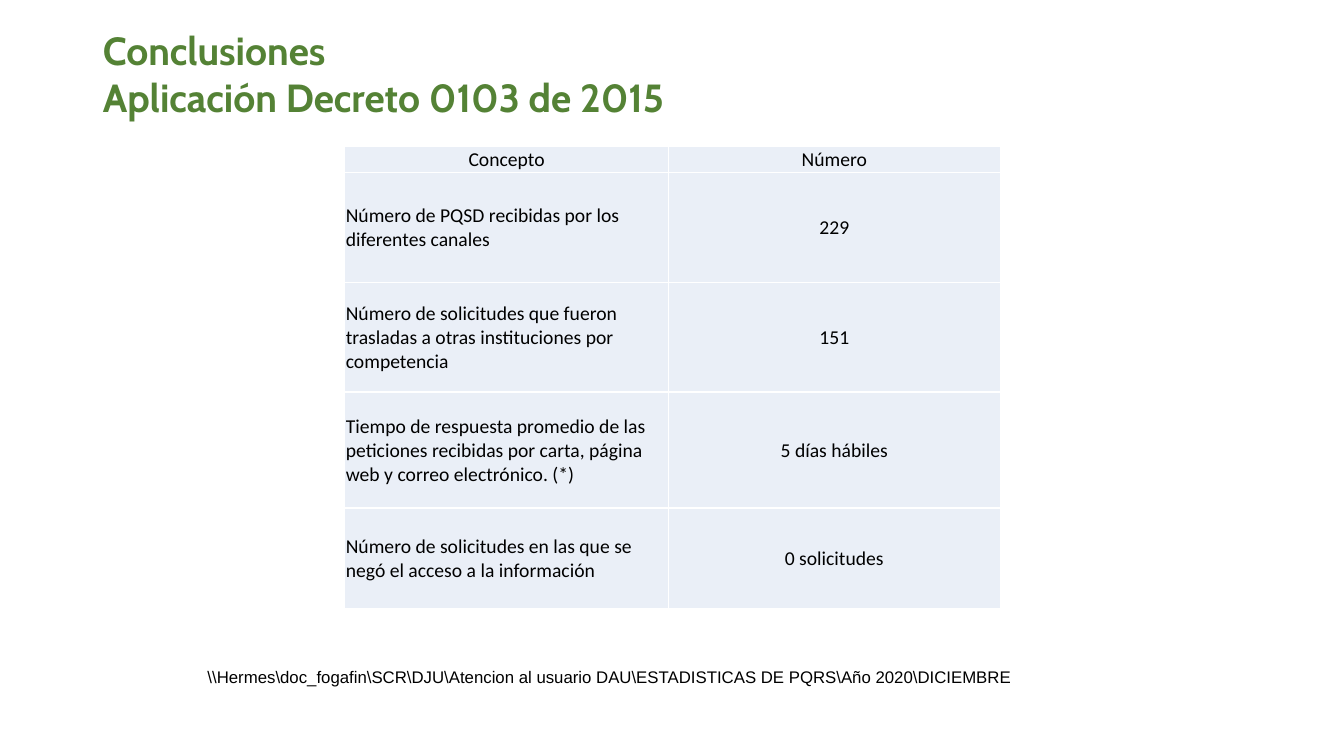
from lxml import etree
from pptx import Presentation
from pptx import util as u
from pptx.dml.color import RGBColor
from pptx.enum import text
from pptx.oxml.ns import qn

COLORS = {"title": "548235", "body": "000000", "cell": "EAEFF7", "border": "FFFFFF"}
SLIDE_W, SLIDE_H = u.Inches(13.33), u.Inches(7.5)
COLUMN_WIDTHS = [3.21, 3.29]
ROW_HEIGHTS = [0.26, 1.09, 1.09, 1.15, 1]
RESULTS = [
    ("Concepto", "Número"),
    ("Número de PQSD recibidas por los diferentes canales", "229"),
    ("Número de solicitudes que fueron trasladas a otras instituciones por competencia", "151"),
    ("Tiempo de respuesta promedio de las peticiones recibidas por carta, página web "
     "y correo electrónico. (*)", "5 días hábiles"),
    ("Número de solicitudes en las que se negó el acceso a la información", "0 solicitudes"),
]
SOURCE_PATH = (r"\\Hermes\doc_fogafin\SCR\DJU\Atencion al usuario DAU"
               r"\ESTADISTICAS DE PQRS\Año 2020\DICIEMBRE")


def style_runs(paragraph, font_name, size, color, bold=False):
    for run in paragraph.runs:
        run.font.name = font_name
        run.font.size = u.Pt(size)
        run.font.bold = bold
        run.font.color.rgb = RGBColor.from_string(COLORS[color])


def add_title(slide, wording):
    title = slide.shapes.title
    title.left, title.top = u.Inches(0.92), 0
    title.width, title.height = u.Inches(11.5), u.Inches(1.45)
    frame = title.text_frame
    frame.text = wording
    frame.vertical_anchor = text.MSO_ANCHOR.MIDDLE
    frame.auto_size = text.MSO_AUTO_SIZE.NONE
    heading = frame.paragraphs[0]
    heading.alignment = text.PP_ALIGN.LEFT
    style_runs(heading, "Cabin", 28, "title", bold=True)


def add_borders(cell):
    properties = cell._tc.get_or_add_tcPr()
    for position, side in enumerate(("lnL", "lnR", "lnT", "lnB")):
        line = etree.Element(qn(f"a:{side}"), w=str(u.Pt(1)))
        fill = etree.SubElement(line, qn("a:solidFill"))
        etree.SubElement(fill, qn("a:srgbClr"), val=COLORS["border"])
        properties.insert(position, line)


def fill_cell(cell, wording, alignment):
    cell.text_frame.text = wording
    cell.vertical_anchor = text.MSO_ANCHOR.MIDDLE
    cell.margin_left = cell.margin_right = cell.margin_top = u.Inches(0.01)
    cell.margin_bottom = 0
    cell.fill.solid()
    cell.fill.fore_color.rgb = RGBColor.from_string(COLORS["cell"])
    add_borders(cell)
    paragraph = cell.text_frame.paragraphs[0]
    paragraph.alignment = alignment
    style_runs(paragraph, "Calibri", 14, "body")


def add_results_table(slide):
    table = slide.shapes.add_table(
        len(RESULTS), len(COLUMN_WIDTHS), u.Inches(3.42), u.Inches(1.45),
        u.Inches(sum(COLUMN_WIDTHS)), u.Inches(sum(ROW_HEIGHTS))).table
    table.first_row = table.horz_banding = False
    for column, width in zip(table.columns, COLUMN_WIDTHS):
        column.width = u.Inches(width)
    for row, height in zip(table.rows, ROW_HEIGHTS):
        row.height = u.Inches(height)
    for r, result in enumerate(RESULTS):
        for c, wording in enumerate(result):
            is_concept = r > 0 and c == 0
            alignment = text.PP_ALIGN.LEFT if is_concept else text.PP_ALIGN.CENTER
            fill_cell(table.cell(r, c), wording, alignment)


def add_source_path(slide):
    frame = slide.shapes.add_textbox(
        u.Inches(1.96), u.Inches(6.57), u.Inches(9.54), u.Inches(0.3)).text_frame
    frame.word_wrap = True
    frame.auto_size = text.MSO_AUTO_SIZE.SHAPE_TO_FIT_TEXT
    frame.text = SOURCE_PATH
    paragraph = frame.paragraphs[0]
    paragraph.alignment = text.PP_ALIGN.JUSTIFY
    style_runs(paragraph, "Arial", 12, "body")


def main():
    deck = Presentation()
    deck.slide_width, deck.slide_height = SLIDE_W, SLIDE_H
    slide = deck.slides.add_slide(deck.slide_layouts[5])
    add_title(slide, "Conclusiones\vAplicación Decreto 0103 de 2015")
    add_source_path(slide)
    add_results_table(slide)
    deck.save("out.pptx")


if __name__ == "__main__":
    main()
